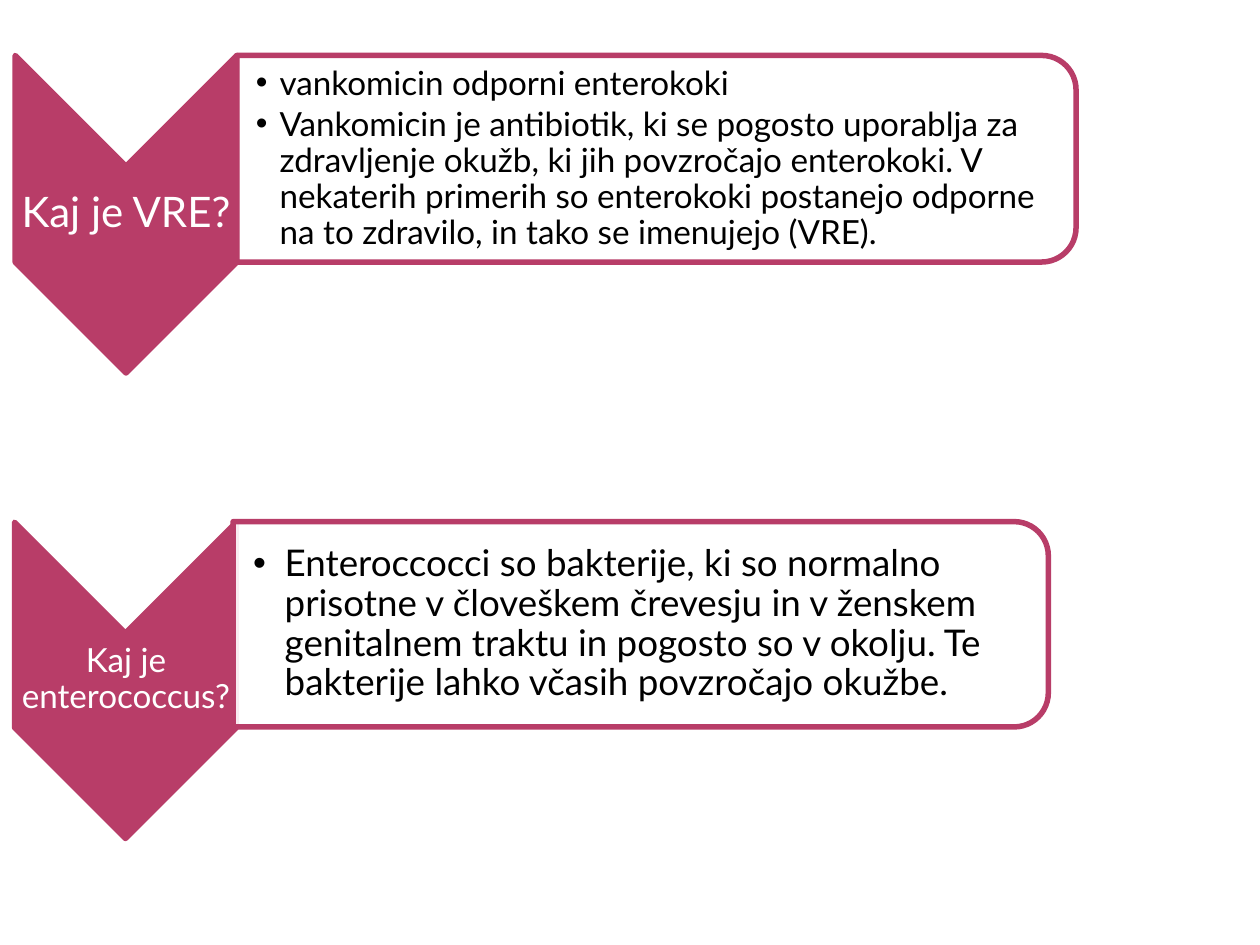
from lxml.etree import SubElement
from pptx import Presentation
from pptx.dml.color import RGBColor
from pptx.enum.shapes import MSO_SHAPE
from pptx.enum.text import MSO_ANCHOR, PP_ALIGN
from pptx.oxml.ns import qn
from pptx.util import Inches, Pt

PINK = "B83D68"


def add_rotated(shapes, kind, box, fill, alpha=None):
    """Add an outlined shape turned by 90 degrees; alpha is opacity in percent."""
    sp = shapes.add_shape(kind, *map(Inches, box))
    sp.rotation = 90
    sp.shadow.inherit = False
    sp.fill.solid()
    sp.fill.fore_color.rgb = RGBColor.from_string(fill)
    sp.line.color.rgb = RGBColor.from_string(PINK)
    sp.line.width = Pt(3.15)
    spPr = sp._element.spPr
    SubElement(spPr.find(qn("a:ln")), qn("a:round"))
    if alpha:
        color = spPr.find(qn("a:solidFill"))[0]
        SubElement(color, qn("a:alpha"), val=str(alpha * 1000))


def add_text(shapes, box, paragraphs, size, color, inset, left_inset, after,
             indent=None):
    """Add a middle-anchored text box: bulleted if indent is given, else centred."""
    tf = shapes.add_textbox(*map(Inches, box)).text_frame
    tf.word_wrap = True
    tf.vertical_anchor = MSO_ANCHOR.MIDDLE
    tf.margin_left = Inches(left_inset)
    tf.margin_top = tf.margin_right = tf.margin_bottom = Inches(inset)
    for i, text in enumerate(paragraphs):
        p = tf.paragraphs[0] if i == 0 else tf.add_paragraph()
        p.line_spacing = 0.9
        p.space_after = Pt(round(size * after))
        if indent:
            p.level = 1
            pPr = p._p.get_or_add_pPr()
            pPr.set("marL", str(Inches(indent)))
            pPr.set("indent", str(-Inches(indent)))
            SubElement(pPr, qn("a:buFont"), typeface="Arial")
            SubElement(pPr, qn("a:buChar"), char="•")
        else:
            p.alignment = PP_ALIGN.CENTER
        r = p.add_run()
        r.text = text
        r.font.name = "Lato"
        r.font.size = Pt(size)
        r.font.color.rgb = RGBColor.from_string(color)


prs = Presentation()
prs.slide_width, prs.slide_height = Inches(10), Inches(7.5)
s = prs.slides.add_slide(prs.slide_layouts[6])

rows = [
    dict(question="Kaj je VRE?", question_size=24, inset=0.02,
         chevron=(-0.26, 0.82, 2.52, 1.76), label=(0.12, 1.32, 1.76, 0.76),
         panel=(4.39, -2.07, 1.64, 6.66), body=(1.88, 0.52, 6.58, 1.48),
         answer_size=19, left_inset=0.15, indent=0.19,
         answers=[
             "vankomicin odporni enterokoki",
             "Vankomicin je antibiotik, ki se pogosto uporablja za zdravljenje "
             "okužb, ki jih povzročajo enterokoki. V nekaterih primerih so "
             "enterokoki postanejo odporne na to zdravilo, in tako se "
             "imenujejo (VRE)."]),
    dict(question="Kaj je enterococcus?", question_size=19, inset=0.01,
         chevron=(-0.26, 4.52, 2.51, 1.76), label=(0.12, 5.02, 1.76, 0.75),
         panel=(4.27, 1.72, 1.63, 6.47), body=(1.85, 4.22, 6.39, 1.47),
         answer_size=21, left_inset=0.16, indent=0.25,
         answers=[
             "Enteroccocci so bakterije, ki so normalno prisotne v človeškem "
             "črevesju in v ženskem genitalnem traktu in pogosto so v okolju. "
             "Te bakterije lahko včasih povzročajo okužbe."]),
]

for row in rows:
    shapes = s.shapes.add_group_shape().shapes
    add_rotated(shapes, MSO_SHAPE.CHEVRON, row["chevron"], PINK)
    add_text(shapes, row["label"], [row["question"]], row["question_size"],
             "FFFFFF", inset=row["inset"], left_inset=row["inset"], after=0.35)
    add_rotated(shapes, MSO_SHAPE.ROUND_2_SAME_RECTANGLE, row["panel"],
                "FFFFFF", alpha=90)
    add_text(shapes, row["body"], row["answers"], row["answer_size"], "000000",
             inset=0.01, left_inset=row["left_inset"], after=0.15,
             indent=row["indent"])

prs.save("out.pptx")
